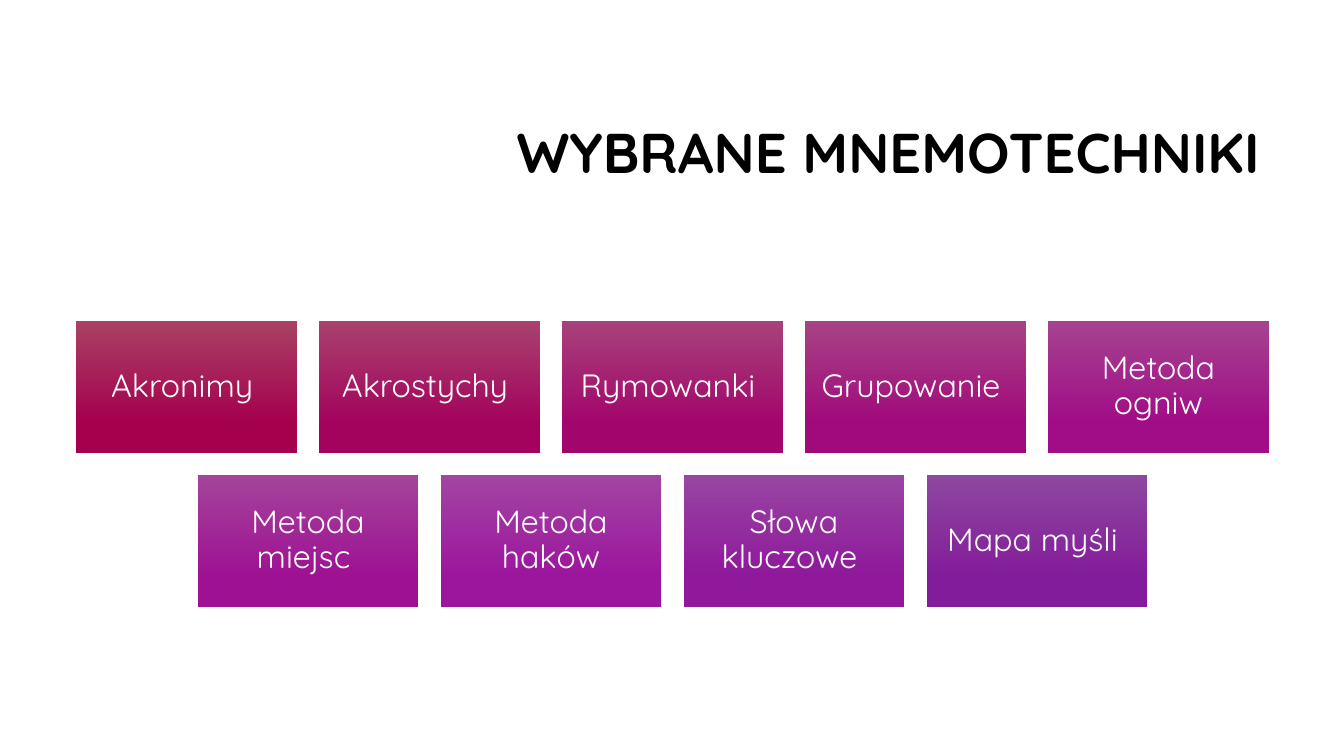
from dataclasses import dataclass

import pptx
import pptx.dml.color
import pptx.enum.shapes
import pptx.enum.text
import pptx.slide
import pptx.text.text
import pptx.util

Inches = pptx.util.Inches
FONT = "Quicksand"
COLORS = {
    "title": "000000", "label": "FFFFFF",
    "acronyms_top": "A94263", "acronyms_base": "A4004E",
    "acrostics_top": "A8426E", "acrostics_base": "A3035D",
    "rhymes_top": "A7427A", "rhymes_base": "A2066C",
    "grouping_top": "A64385", "grouping_base": "A10A7A",
    "links_top": "A54390", "links_base": "A00D87",
    "places_top": "A4449A", "places_base": "9E1193",
    "hooks_top": "A245A3", "hooks_base": "9C159D",
    "keywords_top": "9746A2", "keywords_base": "8F189B",
    "mind_map_top": "8D48A0", "mind_map_base": "831C9A",
}

# Tile grid: each row is centred on the same axis
TILE_WIDTH, TILE_HEIGHT, GAP = 2.19, 1.31, 0.22
GRID_CENTER, GRID_TOP = 6.67, 3.18


@dataclass(frozen=True)
class Technique:
    label: str
    color: str


TECHNIQUE_ROWS = [
    [
        Technique("Akronimy ", "acronyms"),
        Technique("Akrostychy ", "acrostics"),
        Technique("Rymowanki ", "rhymes"),
        Technique("Grupowanie ", "grouping"),
        Technique("Metoda ogniw", "links"),
    ],
    [
        Technique("Metoda miejsc ", "places"),
        Technique("Metoda haków", "hooks"),
        Technique("Słowa kluczowe ", "keywords"),
        Technique("Mapa myśli ", "mind_map"),
    ],
]


def rgb(name: str) -> pptx.dml.color.RGBColor:
    return pptx.dml.color.RGBColor.from_string(COLORS[name])


def write(frame: pptx.text.text.TextFrame, text: str, size: float, color: str,
          align: pptx.enum.text.PP_ALIGN, bold: bool = False) -> None:
    frame.word_wrap = True
    frame.vertical_anchor = pptx.enum.text.MSO_ANCHOR.MIDDLE
    paragraph = frame.paragraphs[0]
    paragraph.alignment = align
    paragraph.line_spacing = 0.9
    run = paragraph.add_run()
    run.text = text
    run.font.name = FONT
    run.font.size = pptx.util.Pt(size)
    run.font.bold = bold
    run.font.color.rgb = rgb(color)


def draw_tile(slide: pptx.slide.Slide, technique: Technique, left: float, top: float) -> None:
    tile = slide.shapes.add_shape(
        pptx.enum.shapes.MSO_SHAPE.RECTANGLE,
        Inches(left), Inches(top), Inches(TILE_WIDTH), Inches(TILE_HEIGHT))
    tile.shadow.inherit = False
    tile.line.fill.background()
    tile.fill.gradient()
    tile.fill.gradient_angle = 270
    for stop, position, part in zip(tile.fill.gradient_stops, (0, 0.78), ("top", "base")):
        stop.position = position
        stop.color.rgb = rgb(f"{technique.color}_{part}")
    frame = tile.text_frame
    frame.margin_left = frame.margin_right = Inches(0.1)
    frame.margin_top = frame.margin_bottom = Inches(0.1)
    write(frame, technique.label, 23, "label", pptx.enum.text.PP_ALIGN.CENTER)


def main() -> None:
    presentation = pptx.Presentation()
    presentation.slide_width = Inches(13.33)
    presentation.slide_height = Inches(7.5)
    slide = presentation.slides.add_slide(presentation.slide_layouts[6])

    # Title
    title = slide.shapes.add_textbox(Inches(3.17), Inches(0.84), Inches(9.42), Inches(1.41))
    write(title.text_frame, "WYBRANE MNEMOTECHNIKI", 40, "title",
          pptx.enum.text.PP_ALIGN.RIGHT, bold=True)

    # Technique tiles
    for row, techniques in enumerate(TECHNIQUE_ROWS):
        row_width = len(techniques) * (TILE_WIDTH + GAP) - GAP
        row_left = GRID_CENTER - row_width / 2
        for column, technique in enumerate(techniques):
            draw_tile(slide, technique, row_left + column * (TILE_WIDTH + GAP),
                      GRID_TOP + row * (TILE_HEIGHT + GAP))

    presentation.save("out.pptx")


if __name__ == "__main__":
    main()
